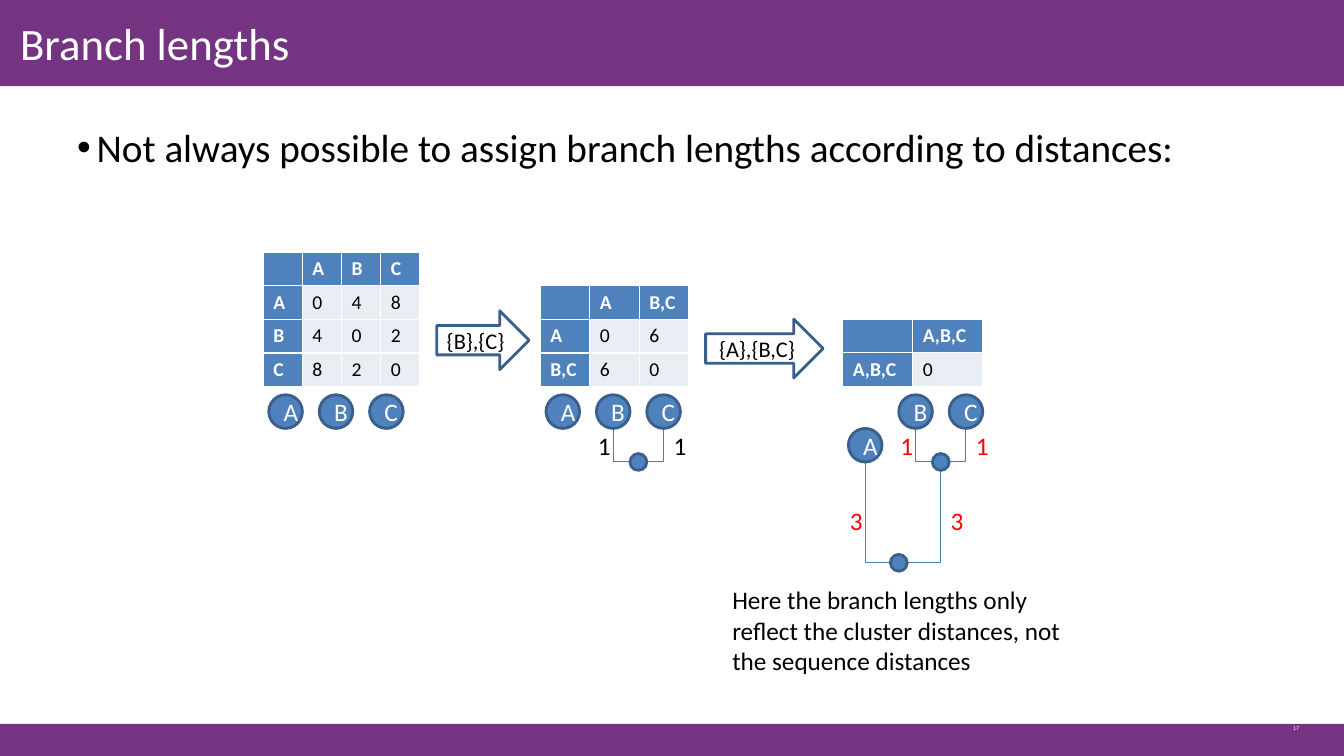
from pptx import Presentation, util as u
from pptx.dml.color import RGBColor
from pptx.enum import shapes, text
from lxml import etree

A = "{http://schemas.openxmlformats.org/drawingml/2006/main}"
COLORS = {"purple": "743481", "white": "FFFFFF", "black": "000000", "red": "FF0000",
          "blue": "4F81BD", "outline": "3A5F8C", "branch": "4B7EBC", "cell": "E9EDF4"}

prs = Presentation()
prs.slide_width, prs.slide_height = u.Pt(960), u.Pt(540)
s = prs.slides.add_slide(prs.slide_layouts[6])


def write(tf, words, size, color, align=text.PP_ALIGN.LEFT, bold=False):
    tf.word_wrap = True
    p = tf.paragraphs[0]
    p.alignment = align
    r = p.add_run()
    r.text = words
    r.font.name, r.font.size, r.font.bold = "Calibri", u.Pt(size), bold
    r.font.color.rgb = RGBColor.from_string(COLORS[color])
    return p


def add_shape(kind, x, y, w, h, fill=None, line=None):
    sp = s.shapes.add_shape(kind, u.Pt(x), u.Pt(y), u.Pt(w), u.Pt(h))
    sp.shadow.inherit = False
    if fill:
        sp.fill.solid()
        sp.fill.fore_color.rgb = RGBColor.from_string(COLORS[fill])
    else:
        sp.fill.background()
    if line:
        sp.line.color.rgb = RGBColor.from_string(COLORS[line])
        sp.line.width = u.Pt(2)
    else:
        sp.line.fill.background()
    return sp


shape = shapes.MSO_SHAPE
center = text.PP_ALIGN.CENTER

for top, height in [(517, 23.5), (-0.5, 62)]:
    add_shape(shape.RECTANGLE, 0, top, 960, height, "purple")

title = s.shapes.add_textbox(u.Pt(0), u.Pt(-0.5), u.Pt(750), u.Pt(62)).text_frame
title.vertical_anchor = text.MSO_ANCHOR.MIDDLE
title.margin_left = u.Pt(14.4)
write(title, "Branch lengths", 32, "white")

number = s.shapes.add_textbox(u.Pt(916.5), u.Pt(514), u.Pt(43.5), u.Pt(29)).text_frame
write(number, "17", 4.3, "white")

body = s.shapes.add_textbox(u.Pt(48), u.Pt(84.5), u.Pt(864), u.Pt(398)).text_frame
p = write(body, "Not always possible to assign branch lengths according to distances:", 28, "black")
pPr = p._p.get_or_add_pPr()
pPr.set("marL", str(u.Pt(14)))
pPr.set("indent", str(u.Pt(-14)))
etree.SubElement(pPr, A + "buFont").set("typeface", "Arial")
etree.SubElement(pPr, A + "buChar").set("char", "•")

matrices = [
    (188, 180, 28, ["A", "B", "C"], [[0, 4, 8], [4, 0, 2], [8, 2, 0]]),
    (386, 204, 35.3, ["A", "B,C"], [[0, 6], [6, 0]]),
    (602, 228, 50, ["A,B,C"], [[0]]),
]
for x, y, col_width, clusters, distances in matrices:
    n = len(clusters) + 1
    table = s.shapes.add_table(n, n, u.Pt(x), u.Pt(y), u.Pt(col_width * n), u.Pt(24 * n)).table
    table.first_col, table.horz_banding = True, False
    for col in table.columns:
        col.width = u.Pt(col_width)
    rows = [[""] + clusters] + [[c] + d for c, d in zip(clusters, distances)]
    for i, row in enumerate(rows):
        for j, value in enumerate(row):
            cell = table.cell(i, j)
            header = i == 0 or j == 0
            cell.fill.solid()
            cell.fill.fore_color.rgb = RGBColor.from_string(COLORS["blue" if header else "cell"])
            if value == "":
                cell.margin_top = cell.margin_bottom = 0
            else:
                write(cell.text_frame, str(value), 14, "white" if header else "black", bold=header)

for x, y, width, merged in [(312, 222, 66, "{B},{C}"), (504, 228, 84, "{A},{B,C}")]:
    arrow = add_shape(shape.RIGHT_ARROW, x, y, width, 42, line="outline")
    write(arrow.text_frame, merged, 16, "black", center)

branches = [((462, 330), (474, 306)), ((450, 330), (438, 306)),
            ((678, 330), (690, 306)), ((666, 330), (654, 306)),
            ((636, 402), (618, 330)), ((648, 402), (672, 336))]
for hub, tip in branches:
    branch = s.shapes.add_connector(shapes.MSO_CONNECTOR.ELBOW, *map(u.Pt, hub + tip))
    branch.line.color.rgb = RGBColor.from_string(COLORS["branch"])
    branch.line.width = u.Pt(0.75)
    spPr = branch._element.spPr
    spPr.find(A + "prstGeom").set("prst", "bentConnector2")
    etree.SubElement(spPr, A + "effectLst")

leaves = [(x + 36 * i, 282, name) for x in (192, 390) for i, name in enumerate("ABC")]
leaves += [(642, 282, "B"), (678, 282, "C"), (606, 306, "A")]
for x, y, name in leaves:
    leaf = add_shape(shape.OVAL, x, y, 24, 24, "blue", "outline")
    write(leaf.text_frame, name, 18, "white", center)

for x, y in [(450, 324), (666, 324), (636, 396)]:
    add_shape(shape.OVAL, x, y, 12, 12, "blue", "outline")

lengths = [(420, 306, "1", "black"), (474, 306, "1", "black"), (636, 306, "1", "red"),
           (690, 306, "1", "red"), (672, 360, "3", "red"), (600, 360, "3", "red")]
for x, y, length, color in lengths:
    tf = s.shapes.add_textbox(u.Pt(x), u.Pt(y), u.Pt(18), u.Pt(24)).text_frame
    tf.vertical_anchor = text.MSO_ANCHOR.MIDDLE
    write(tf, length, 18, color, center)

caption = s.shapes.add_textbox(u.Pt(516), u.Pt(414), u.Pt(276), u.Pt(72.7)).text_frame
write(caption, "Here the branch lengths only reflect the cluster distances, not the sequence distances",
      18, "black")

prs.save("out.pptx")
